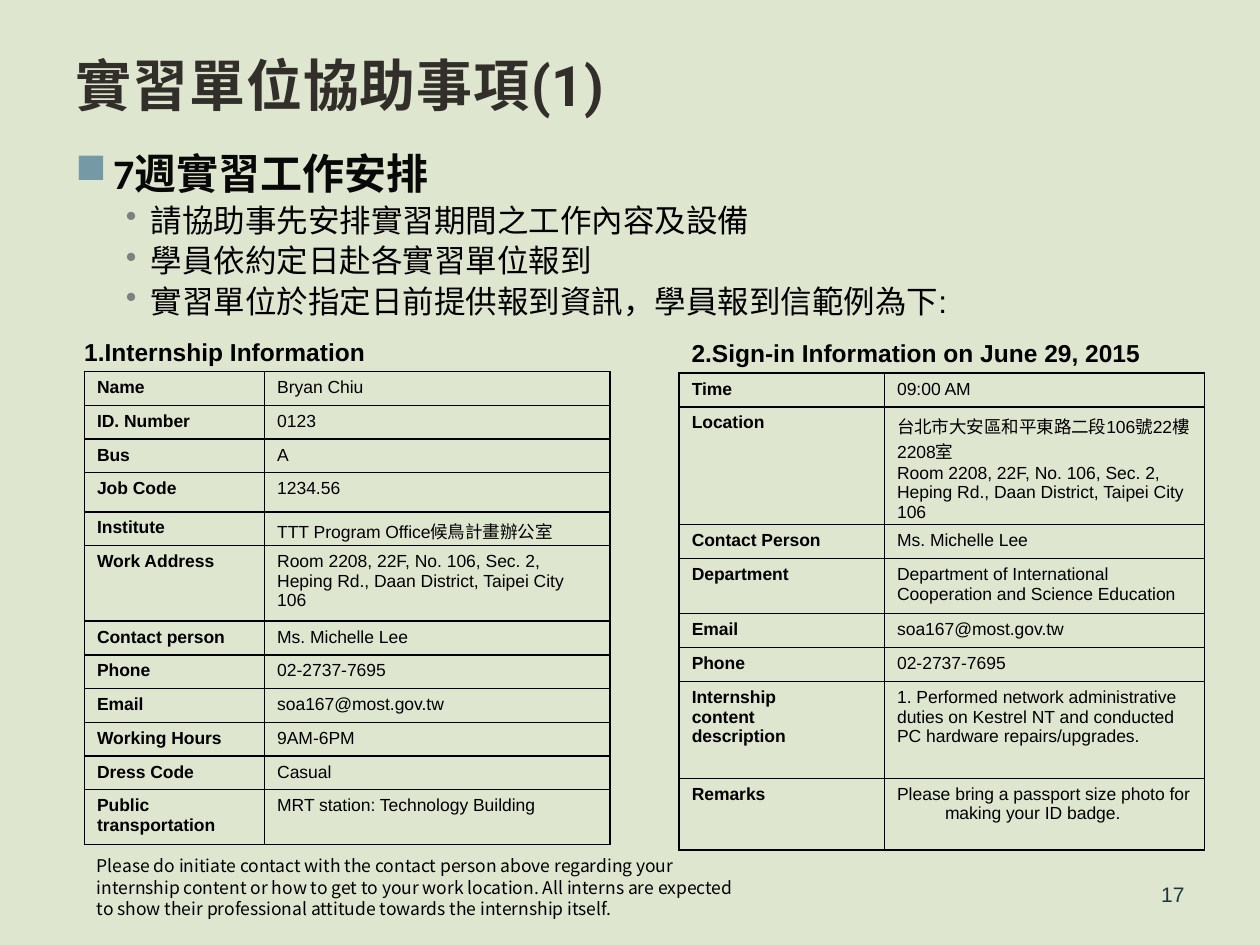
import pptx
import pptx.util
import pptx.dml.color
import pptx.enum.text
import pptx.oxml
import pptx.oxml.ns
from pptx.util import Inches

THEME = {
    "back": "DFE6D0",
    "line": "000000",
    "edge": 1,
    "title": ("Roboto", 32, "322F2A", True),
    "lead": ("Calibri", 24, "080808", True),
    "point": ("Arial", 18, "000000", False),
    "head": ("Arial", 14, "000000", True),
    "label": ("Arial", 10, "000000", True),
    "value": ("Arial", 10, "000000", False),
    "note": ("Noto Sans CJK SC", 10, "000000", False),
    "page": ("Arial", 12, "1D3641", False),
}

TITLE = "實習單位協助事項(1)"
LEAD = "7週實習工作安排"
POINTS = [
    "請協助事先安排實習期間之工作內容及設備",
    "學員依約定日赴各實習單位報到",
    "實習單位於指定日前提供報到資訊，學員報到信範例為下:",
]
NOTE = (
    "Please do initiate contact with the contact person above regarding your "
    "internship content or how to get to your work location. All interns are "
    "expected to show their professional attitude towards the internship itself."
)
ROOM = "Room 2208, 22F, No. 106, Sec. 2, Heping Rd., Daan District, Taipei City 106"
HANG = 0.38

TABLES = [
    {
        "head": "1.Internship Information",
        "spot": (0.57, 2.62, 2.51, 0.34),
        "at": (0.67, 2.95, 4.17, 3.74),
        "split": 1.43,
        "tall": {3: 0.31, 5: 0.6, 11: 0.43},
        "flat": {5},
        "rows": [
            ("Name", "Bryan Chiu"),
            ("ID. Number", "0123"),
            ("Bus", "A"),
            ("Job Code", "1234.56"),
            ("Institute", "TTT Program Office候鳥計畫辦公室"),
            ("Work Address", ROOM),
            ("Contact person", "Ms. Michelle Lee"),
            ("Phone", "02-2737-7695"),
            ("Email", "soa167@most.gov.tw"),
            ("Working Hours", "9AM-6PM"),
            ("Dress Code", "Casual"),
            ("Public\ntransportation", "MRT station: Technology Building"),
        ],
    },
    {
        "head": "2.Sign-in Information on June 29, 2015",
        "spot": (5.39, 2.63, 3.87, 0.34),
        "at": (5.39, 2.96, 4.17, 3.78),
        "split": 1.63,
        "tall": {1: 0.93, 3: 0.43, 6: 0.77, 7: 0.57},
        "flat": {1, 3, 6},
        "rows": [
            ("Time", "09:00 AM"),
            ("Location", "台北市大安區和平東路二段106號22樓2208室\n" + ROOM),
            ("Contact Person", "Ms. Michelle Lee"),
            ("Department", "Department of International Cooperation and Science Education"),
            ("Email", "soa167@most.gov.tw"),
            ("Phone", "02-2737-7695"),
            (
                "Internship\ncontent\ndescription",
                "1. Performed network administrative duties on Kestrel NT "
                "and conducted PC hardware repairs/upgrades.",
            ),
            ("Remarks", "Please bring a passport size photo for making your ID badge."),
        ],
    },
]


def write(para, text, style):
    name, size, color, bold = THEME[style]
    run = para.add_run()
    run.text = text
    run.font.name = name
    run.font.size = pptx.util.Pt(size)
    run.font.bold = bold
    run.font.color.rgb = pptx.dml.color.RGBColor.from_string(color)
    return run


def indent(para, left, first):
    props = para._p.get_or_add_pPr()
    props.set("marL", str(Inches(left)))
    props.set("indent", str(Inches(first)))
    return props


def add_xml(host, body):
    space = pptx.oxml.ns.nsdecls("a")
    host.append(pptx.oxml.parse_xml(body.replace(" ", f" {space} ", 1)))


def bullet(para, mark, color, left, first):
    props = indent(para, left, first)
    add_xml(props, f'<a:buClr ><a:srgbClr val="{color}"/></a:buClr>')
    add_xml(props, f'<a:buChar char="{mark}"/>')


def add_box(slide, at, anchor="TOP", wrap=True, grow=False):
    frame = slide.shapes.add_textbox(*map(Inches, at)).text_frame
    frame.word_wrap = wrap
    frame.vertical_anchor = pptx.enum.text.MSO_ANCHOR[anchor]
    if grow:
        frame.auto_size = pptx.enum.text.MSO_AUTO_SIZE.SHAPE_TO_FIT_TEXT
    return frame


def add_body(slide):
    frame = add_box(slide, (0.5, 1.15, 9, 5.55))
    lead = frame.paragraphs[0]
    bullet(lead, "■", "759AA5", 0.3, -0.3)
    lead.line_spacing = 0.95
    write(lead, LEAD, "lead")
    for text in POINTS:
        para = frame.add_paragraph()
        para.level = 1
        bullet(para, "•", "808080", 0.6, -0.2)
        para.line_spacing = 0.9
        para.space_before = pptx.util.Pt(3.6)
        write(para, text, "point")


def fill_cell(cell, text, style, hang):
    cell.fill.background()
    frame = cell.text_frame
    for num, line in enumerate(text.split("\n")):
        para = frame.add_paragraph() if num else frame.paragraphs[0]
        indent(para, hang, -hang)
        write(para, line, style)
    props = cell._tc.get_or_add_tcPr()
    wide = pptx.util.Pt(THEME["edge"])
    for spot, side in enumerate("LRTB"):
        add_xml(
            props,
            f'<a:ln{side} w="{wide}"><a:solidFill><a:srgbClr val="{THEME["line"]}"/>'
            f"</a:solidFill></a:ln{side}>",
        )
        props.insert(spot, props[-1])


def add_grid(slide, data):
    rows, tall = data["rows"], data["tall"]
    wide, high = data["at"][2:]
    table = slide.shapes.add_table(len(rows), 2, *map(Inches, data["at"])).table
    table.first_row = table.horz_banding = False
    for col, size in zip(table.columns, (data["split"], wide - data["split"])):
        col.width = Inches(size)
    plain = (high - sum(tall.values())) / (len(rows) - len(tall))
    for num, (label, value) in enumerate(rows):
        table.rows[num].height = Inches(tall.get(num, plain))
        fill_cell(table.cell(num, 0), label, "label", HANG)
        fill_cell(table.cell(num, 1), value, "value", 0 if num in data["flat"] else HANG)


def main():
    deck = pptx.Presentation()
    deck.slide_width, deck.slide_height = Inches(10), Inches(7.5)
    slide = deck.slides.add_slide(deck.slide_layouts[6])
    back = slide.background.fill
    back.solid()
    back.fore_color.rgb = pptx.dml.color.RGBColor.from_string(THEME["back"])

    title = add_box(slide, (0.5, -0.27, 9, 1.25), "BOTTOM")
    run = write(title.paragraphs[0], TITLE, "title")
    run._r.get_or_add_rPr().set("spc", "50")
    add_body(slide)

    page = add_box(slide, (7.17, 6.9, 2.33, 0.4), "MIDDLE").paragraphs[0]
    page.alignment = pptx.enum.text.PP_ALIGN.RIGHT
    write(page, "17", "page")

    for data in TABLES:
        head = add_box(slide, data["spot"], "MIDDLE", wrap=False, grow=True)
        write(head.paragraphs[0], data["head"], "head")
        add_grid(slide, data)

    note = add_box(slide, (0.67, 6.74, 5.28, 0.61), grow=True)
    write(note.paragraphs[0], NOTE, "note")
    deck.save("out.pptx")


if __name__ == "__main__":
    main()
